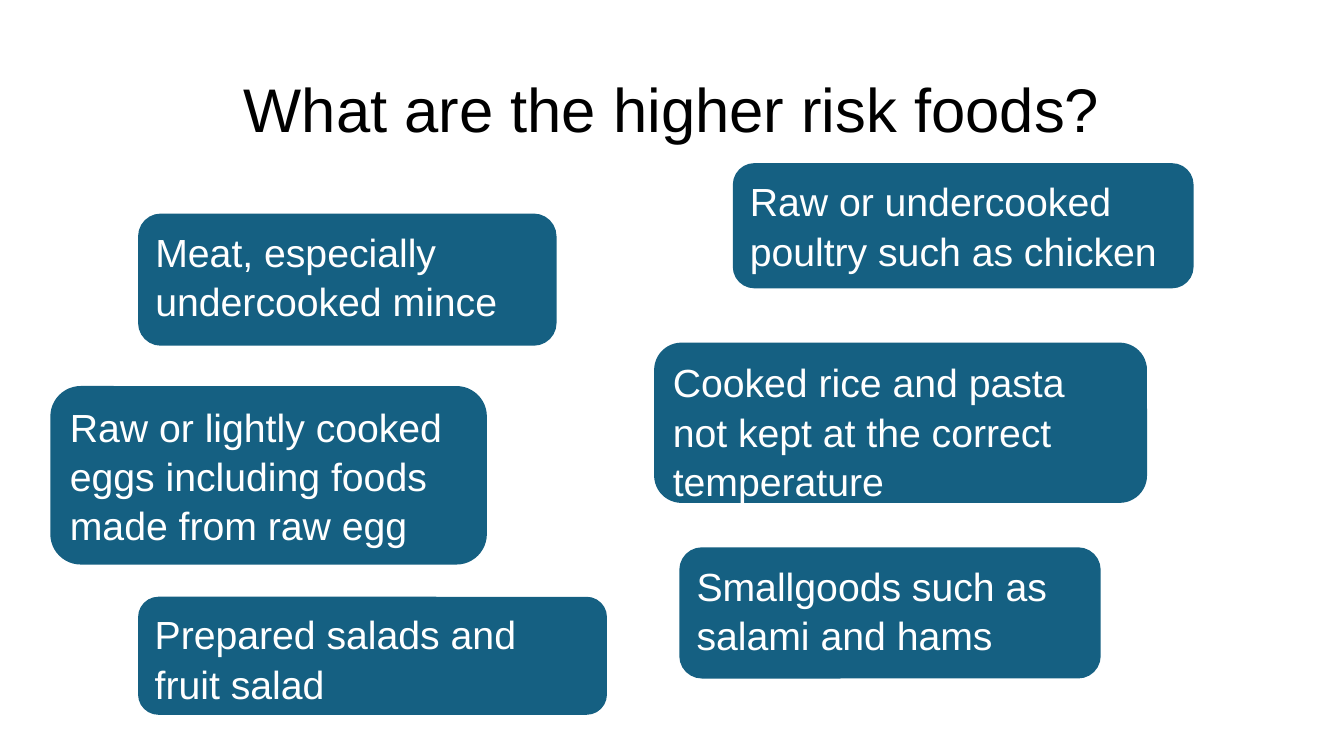
"""Build the slide on higher risk foods."""
from pptx import Presentation
from pptx.dml.color import RGBColor
from pptx.enum.shapes import MSO_SHAPE as SHAPE
from pptx.enum.text import MSO_ANCHOR as ANCHOR, MSO_AUTO_SIZE as AUTO, PP_ALIGN as ALIGN
from pptx.util import Pt

COLORS = {"box": "156082", "title": "000000", "text": "FFFFFF"}
RGB = {name: RGBColor.from_string(value) for name, value in COLORS.items()}


def write(shape, text, size, color, paragraph_format):
    tf = shape.text_frame
    frame_format = {"word_wrap": True, "auto_size": AUTO.NONE, "vertical_anchor": ANCHOR.TOP}
    for name, value in frame_format.items():
        setattr(tf, name, value)
    p = tf.paragraphs[0]
    for name, value in paragraph_format.items():
        setattr(p, name, value)
    r = p.add_run()
    r.text = text
    for name, value in {"name": "Arial", "size": Pt(size)}.items():
        setattr(r.font, name, value)
    r.font.color.rgb = RGB[color]


prs = Presentation()
prs.slide_width, prs.slide_height = Pt(960), Pt(540)
s = prs.slides.add_slide(prs.slide_layouts[5])

title = s.shapes.title
for name, value in {"left": 66.2, "top": 53.3, "width": 828, "height": 64}.items():
    setattr(title, name, Pt(value))
write(title, "What are the higher risk foods?", 44, "title",
      {"alignment": ALIGN.CENTER, "line_spacing": 0.9})

foods = [
    ("Meat, especially undercooked mince", 99.4, 153.3, 297.4, 92.9),
    ("Raw or undercooked poultry such as chicken", 524.2, 117.3, 327.6, 87.9),
    ("Raw or lightly cooked eggs including foods made from raw egg", 36.7, 276.5, 310.3, 126),
    ("Smallgoods such as salami and hams", 486, 391.7, 299.5, 92.2),
    ("Cooked rice and pasta not kept at the correct temperature", 468, 245.5, 350.6, 113),
    ("Prepared salads and fruit salad", 99.4, 427, 333.4, 82.8),
]
for food, *place in foods:
    box = s.shapes.add_shape(SHAPE.ROUNDED_RECTANGLE, *[Pt(v) for v in place])
    box.shadow.inherit = False
    box.fill.solid()
    box.fill.fore_color.rgb = RGB["box"]
    box.line.color.rgb = RGB["box"]
    box.line.width = Pt(1.5)
    write(box, food, 28, "text", {"alignment": ALIGN.LEFT, "line_spacing": 1.05})

prs.save("out.pptx")
